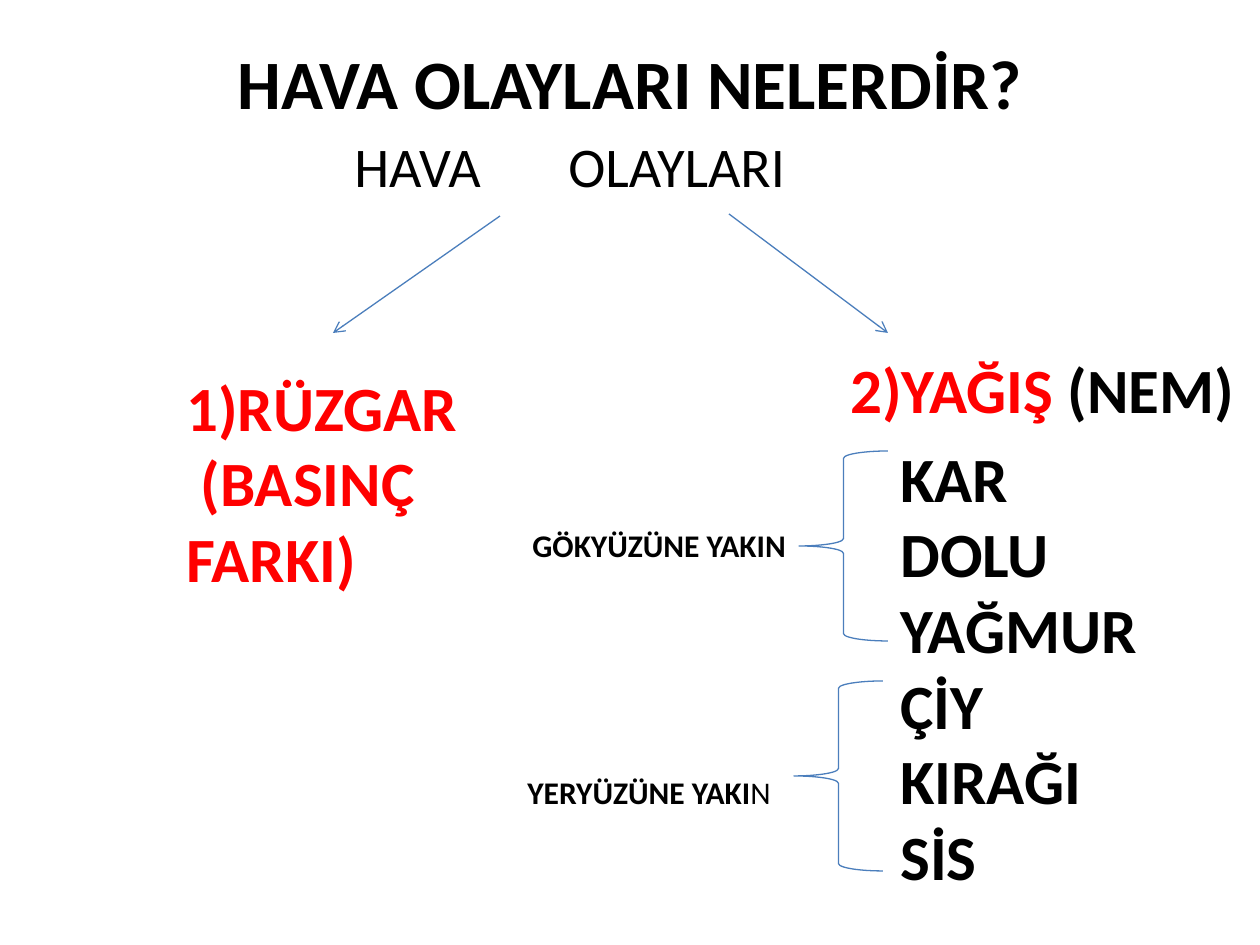
from dataclasses import dataclass

from lxml.etree import SubElement
from pptx import Presentation
from pptx.dml.color import RGBColor
from pptx.enum.shapes import MSO_CONNECTOR, MSO_SHAPE
from pptx.enum.text import MSO_ANCHOR, PP_ALIGN
from pptx.oxml.ns import qn
from pptx.util import Pt


@dataclass(frozen=True)
class Theme:
    """Colours, type sizes and line weight of the slide."""
    font: str = "Calibri"
    ink: RGBColor = RGBColor(0, 0, 0)
    accent: RGBColor = RGBColor(255, 0, 0)
    line: RGBColor = RGBColor(0x4B, 0x7E, 0xBC)
    line_width: float = 0.75
    title: float = 39.6
    subtitle: float = 32
    heading: float = 36
    label: float = 18


THEME = Theme()


def px(n):
    """Turn pixels, 126 to the inch, into EMU."""
    return round(n * 914400 / 126)


def add_text(s, box, lines, size, color=THEME.ink, bold=True, wrap=True):
    """Add a text box with one paragraph per line and return its frame."""
    tf = s.shapes.add_textbox(*map(px, box)).text_frame
    tf.word_wrap = wrap
    tf.text = "\n".join(lines)
    for p in tf.paragraphs:
        p.font.name = THEME.font
        p.font.size = Pt(size)
        p.font.bold = bold
        p.font.color.rgb = color
    return tf


def add_tab(p, pos):
    """Give a paragraph one left tab stop."""
    tabs = SubElement(p._p.get_or_add_pPr(), qn("a:tabLst"))
    SubElement(tabs, qn("a:tab"), pos=str(px(pos)), algn="l")
    p._p.pPr.insert(0, tabs)


def style_line(line):
    """Apply the theme's line colour and weight."""
    line.color.rgb = THEME.line
    line.width = Pt(THEME.line_width)


def add_arrow(s, start, end):
    """Add a thin line with an open arrowhead at its end."""
    c = s.shapes.add_connector(MSO_CONNECTOR.STRAIGHT, *map(px, start + end))
    style_line(c.line)
    SubElement(c.line._get_or_add_ln(), qn("a:tailEnd"), type="arrow")
    SubElement(c._element.spPr, qn("a:effectLst"))


def add_brace(s, left, top):
    """Add an unfilled left brace spanning three list items."""
    sp = s.shapes.add_shape(MSO_SHAPE.LEFT_BRACE, *map(px, (left, top, 89, 190)))
    sp.shadow.inherit = False
    sp.fill.background()
    style_line(sp.line)


def main():
    """Build the weather events slide."""
    prs = Presentation()
    prs.slide_width, prs.slide_height = px(1260), px(945)
    s = prs.slides.add_slide(prs.slide_layouts[6])

    tf = add_text(s, (63, 38, 1134, 87), ["HAVA OLAYLARI NELERDİR?"], THEME.title)
    tf.vertical_anchor = MSO_ANCHOR.MIDDLE
    tf.paragraphs[0].alignment = PP_ALIGN.CENTER

    tf = add_text(s, (342, 125, 855, 80), ["HAVA\tOLAYLARI"], THEME.subtitle, bold=False)
    add_tab(tf.paragraphs[0], 214)

    add_arrow(s, (500, 216), (333, 333))
    add_arrow(s, (729, 214), (888, 333))

    add_text(s, (174, 362, 346, 242), ["1)RÜZGAR", " (BASINÇ FARKI)"],
             THEME.heading, THEME.accent)
    tf = add_text(s, (838, 344, 413, 89), ["2)YAĞIŞ"], THEME.heading,
                  THEME.accent, wrap=False)
    r = tf.paragraphs[0].add_run()
    r.text = " (NEM)"
    r.font.color.rgb = THEME.ink

    add_text(s, (888, 433, 297, 471),
             ["KAR", "DOLU", "YAĞMUR", "ÇİY", "KIRAĞI", "SİS"], THEME.heading)
    add_brace(s, 799, 451)
    add_brace(s, 794, 681)

    add_text(s, (520, 520, 281, 50), ["GÖKYÜZÜNE YAKIN"], THEME.label, wrap=False)
    tf = add_text(s, (515, 767, 271, 50), ["YERYÜZÜNE YAKI"], THEME.label, wrap=False)
    r = tf.paragraphs[0].add_run()
    r.text = "N"
    r.font.bold = False

    prs.save("out.pptx")


if __name__ == "__main__":
    main()
